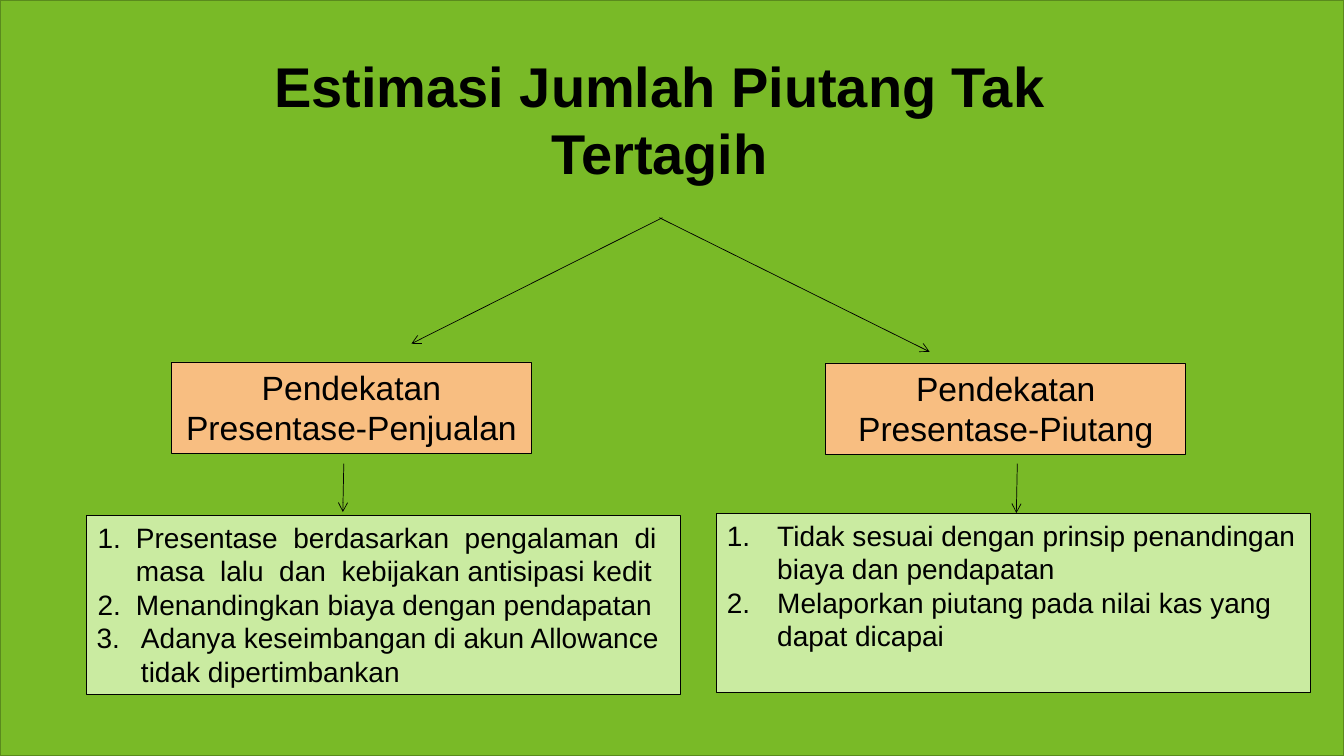
from dataclasses import dataclass

from lxml.etree import SubElement
from pptx import Presentation
from pptx.dml.color import RGBColor
from pptx.enum.shapes import MSO_CONNECTOR, MSO_SHAPE
from pptx.enum.text import MSO_ANCHOR, MSO_AUTO_SIZE, PP_ALIGN
from pptx.oxml.ns import qn
from pptx.util import Inches, Pt


@dataclass(frozen=True)
class Theme:
    """Colours, font and type sizes of the slide."""
    background: str = "79BA27"
    background_line: str = "5A8A1D"
    approach: str = "F8BE81"
    details: str = "CAEBA1"
    ink: str = "000000"
    font: str = "Arial"
    title_size: int = 40
    approach_size: int = 24
    details_size: int = 20


THEME = Theme()


def add_text(paragraph, text, size, alignment, bold=False):
    """Add one formatted run to an aligned paragraph."""
    paragraph.alignment = alignment
    run = paragraph.add_run()
    run.text = text
    run.font.name = THEME.font
    run.font.size = Pt(size)
    run.font.bold = bold
    run.font.color.rgb = RGBColor.from_string(THEME.ink)


def prepare_frame(shape):
    """Wrap the text of a shape from its top edge at a fixed size."""
    frame = shape.text_frame
    frame.word_wrap = True
    frame.auto_size = MSO_AUTO_SIZE.NONE
    frame.vertical_anchor = MSO_ANCHOR.TOP
    return frame


def add_box(slide, left, top, width, height, fill, line, line_width):
    """Add a filled and outlined rectangle without shadow."""
    shape = slide.shapes.add_shape(
        MSO_SHAPE.RECTANGLE, Inches(left), Inches(top), Inches(width), Inches(height))
    shape.shadow.inherit = False
    shape.fill.solid()
    shape.fill.fore_color.rgb = RGBColor.from_string(fill)
    shape.line.color.rgb = RGBColor.from_string(line)
    shape.line.width = Pt(line_width)
    return shape


def add_background(slide):
    """Add the green panel behind everything else."""
    panel = add_box(slide, 0, 0, 13.33, 7.5, THEME.background, THEME.background_line, 1)
    slide.shapes.element.insert(2, panel.element)


def set_title(slide, text):
    """Place and format the title placeholder."""
    title = slide.shapes.title
    title.left, title.top = Inches(2.54), Inches(0.46)
    title.width, title.height = Inches(8), Inches(1.45)
    frame = prepare_frame(title)
    add_text(frame.paragraphs[0], text, THEME.title_size, PP_ALIGN.CENTER, bold=True)


def add_approach(slide, left, top, text, line_width):
    """Add an orange box that names an approach."""
    shape = add_box(slide, left, top, 3.57, 0.91, THEME.approach, THEME.ink, line_width)
    frame = prepare_frame(shape)
    add_text(frame.paragraphs[0], text, THEME.approach_size, PP_ALIGN.CENTER)


def number_paragraph(paragraph, margin, hanging):
    """Give a paragraph an automatic number and a hanging indent."""
    properties = paragraph._p.get_or_add_pPr()
    properties.set("marL", str(Inches(margin)))
    properties.set("indent", str(-Inches(hanging)))
    font = SubElement(properties, qn("a:buFont"))
    font.set("typeface", THEME.font)
    number = SubElement(properties, qn("a:buAutoNum"))
    number.set("type", "arabicPeriod")


def add_details(slide, left, top, items):
    """Add a light green box with a numbered list."""
    shape = add_box(slide, left, top, 5.89, 1.78, THEME.details, THEME.ink, 0.75)
    frame = prepare_frame(shape)
    for index, (text, margin, hanging) in enumerate(items):
        paragraph = frame.add_paragraph() if index else frame.paragraphs[0]
        add_text(paragraph, text, THEME.details_size, PP_ALIGN.LEFT)
        number_paragraph(paragraph, margin, hanging)


def add_arrow(slide, start, end):
    """Add a thin line with an open arrowhead at its end."""
    points = [Inches(length) for length in (*start, *end)]
    arrow = slide.shapes.add_connector(MSO_CONNECTOR.STRAIGHT, *points)
    arrow.line.color.rgb = RGBColor.from_string(THEME.ink)
    arrow.line.width = Pt(0.5)
    head = SubElement(arrow.line._get_or_add_ln(), qn("a:tailEnd"))
    head.set("type", "arrow")
    SubElement(arrow.element.spPr, qn("a:effectLst"))


def main():
    """Build the slide and save it."""
    presentation = Presentation()
    presentation.slide_width = Inches(13.33)
    presentation.slide_height = Inches(7.5)
    slide = presentation.slides.add_slide(presentation.slide_layouts[5])

    add_background(slide)
    set_title(slide, "Estimasi Jumlah Piutang Tak Tertagih")
    add_approach(slide, 1.7, 3.59, "Pendekatan Presentase-Penjualan", 0.25)
    add_approach(slide, 8.19, 3.6, "Pendekatan Presentase-Piutang", 0.5)
    add_details(slide, 0.86, 5.11, [
        ("Presentase  berdasarkan  pengalaman  di  masa  lalu  dan  kebijakan "
         "antisipasi kedit", 0.39, 0.38),
        ("Menandingkan biaya dengan pendapatan", 0.39, 0.38),
        ("Adanya keseimbangan di akun Allowance tidak dipertimbankan", 0.44, 0.44),
    ])
    add_details(slide, 7.11, 5.09, [
        ("Tidak sesuai dengan prinsip penandingan biaya dan pendapatan", 0.5, 0.5),
        ("Melaporkan piutang pada nilai kas yang dapat dicapai", 0.5, 0.5),
    ])
    for start, end in [
        ((6.57, 2.16), (4.08, 3.41)),
        ((6.54, 2.16), (9.22, 3.49)),
        ((3.41, 4.6), (3.4, 5.08)),
        ((10.09, 4.6), (10.08, 5.09)),
    ]:
        add_arrow(slide, start, end)
    presentation.save("out.pptx")


if __name__ == "__main__":
    main()
